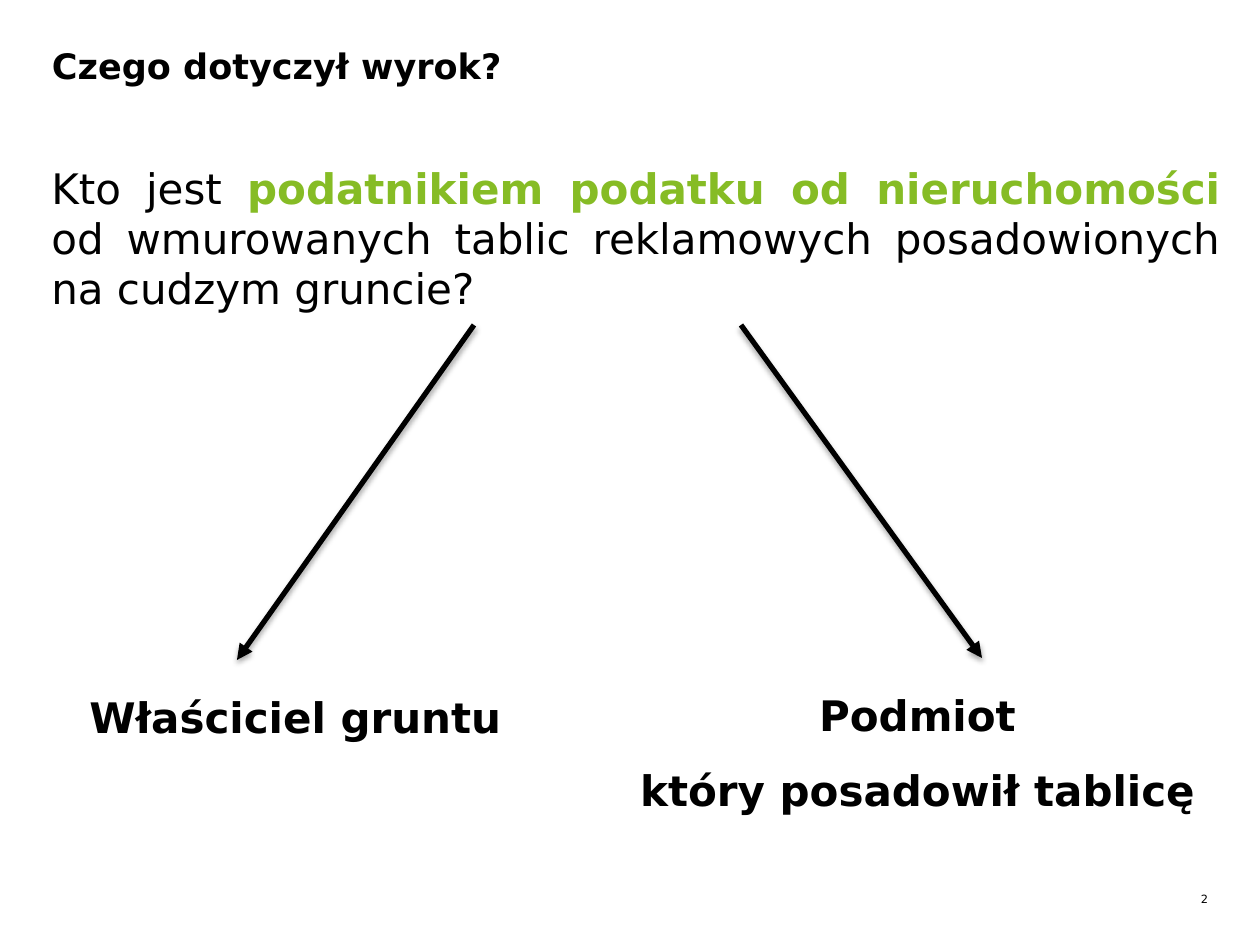
from lxml import etree
from pptx import Presentation
from pptx.dml.color import RGBColor
from pptx.enum.shapes import MSO_CONNECTOR
from pptx.enum.text import MSO_ANCHOR, MSO_AUTO_SIZE, PP_ALIGN
from pptx.oxml import parse_xml
from pptx.oxml.ns import nsdecls, qn
from pptx.util import Emu, Pt

LEFT, RIGHT = PP_ALIGN.LEFT, PP_ALIGN.RIGHT
CENTER, JUSTIFY = PP_ALIGN.CENTER, PP_ALIGN.JUSTIFY
TOP = MSO_ANCHOR.TOP
FIXED, GROW = MSO_AUTO_SIZE.NONE, MSO_AUTO_SIZE.SHAPE_TO_FIT_TEXT
STRAIGHT = MSO_CONNECTOR.STRAIGHT

BLACK = RGBColor(0x00, 0x00, 0x00)
GREEN = RGBColor(0x86, 0xBC, 0x25)
FONT = "DejaVu Sans"
SCALE = 914400 / 126

BARE = {"margin_left": 0, "margin_right": 0, "margin_top": 0, "margin_bottom": 0,
        "auto_size": FIXED}
SHADOW = f"""<a:effectLst {nsdecls('a')}>
  <a:outerShdw blurRad="{Pt(3.1)}" dist="{Pt(1.8)}" dir="5400000" rotWithShape="0">
    <a:srgbClr val="{BLACK}"><a:alpha val="35000"/></a:srgbClr>
  </a:outerShdw>
</a:effectLst>"""


def px(n):
    return Emu(round(n * SCALE))


def apply(target, values):
    for name, value in values.items():
        setattr(target, name, value)


def place(shape, box):
    apply(shape, dict(zip(("left", "top", "width", "height"), map(px, box))))


def fill_text(shape, lines, size, align, spacing=None, **frame_format):
    """Write lines, each a list of (text, bold, colour) runs, into a shape."""
    frame = shape.text_frame
    apply(frame, {"word_wrap": True, "vertical_anchor": TOP, "auto_size": GROW}
          | frame_format)
    for i, runs in enumerate(lines):
        para = frame.add_paragraph() if i else frame.paragraphs[0]
        apply(para, {"alignment": align, "line_spacing": spacing})
        for text, bold, color in runs:
            run = para.add_run()
            run.text = text
            apply(run.font, {"name": FONT, "size": Pt(size), "bold": bold})
            run.font.color.rgb = color


def add_text(slide, box, *args, **kwargs):
    shape = slide.shapes.add_textbox(*map(px, box))
    fill_text(shape, *args, **kwargs)


def add_arrow(slide, start, end):
    arrow = slide.shapes.add_connector(STRAIGHT, *map(px, start + end))
    arrow.line.width = Pt(3)
    arrow.line.color.rgb = BLACK
    etree.SubElement(arrow.line._get_or_add_ln(), qn("a:tailEnd"), type="triangle")
    arrow._element.spPr.append(parse_xml(SHADOW))


def main():
    deck = Presentation()
    apply(deck, {"slide_width": px(1260), "slide_height": px(945)})
    slide = deck.slides.add_slide(deck.slide_layouts[5])

    title = slide.shapes.title
    place(title, (52, 44, 1157, 47))
    fill_text(title, [[("Czego dotyczył wyrok?", True, BLACK)]], 20, LEFT, **BARE)

    question = [("Kto jest ", False, BLACK),
                ("podatnikiem podatku od nieruchomości ", True, GREEN),
                ("od wmurowanych tablic reklamowych posadowionych na cudzym gruncie?",
                 False, BLACK)]
    add_text(slide, (39, 156, 1194, 165), [question], 24, JUSTIFY)

    add_arrow(slide, (474, 325), (237, 660))
    add_arrow(slide, (741, 325), (982, 658))

    add_text(slide, (77, 660, 478, 165), [[("Właściciel gruntu", True, BLACK)]],
             24, JUSTIFY, 1.5)
    payer = [[(text, True, BLACK)] for text in ("Podmiot", "który posadowił tablicę")]
    add_text(slide, (612, 658, 611, 155), payer, 24, CENTER, 1.5, word_wrap=False)

    add_text(slide, (1177, 892, 31, 14), [[("2", False, BLACK)]], 6.5, RIGHT, **BARE)
    deck.save("out.pptx")


if __name__ == "__main__":
    main()
